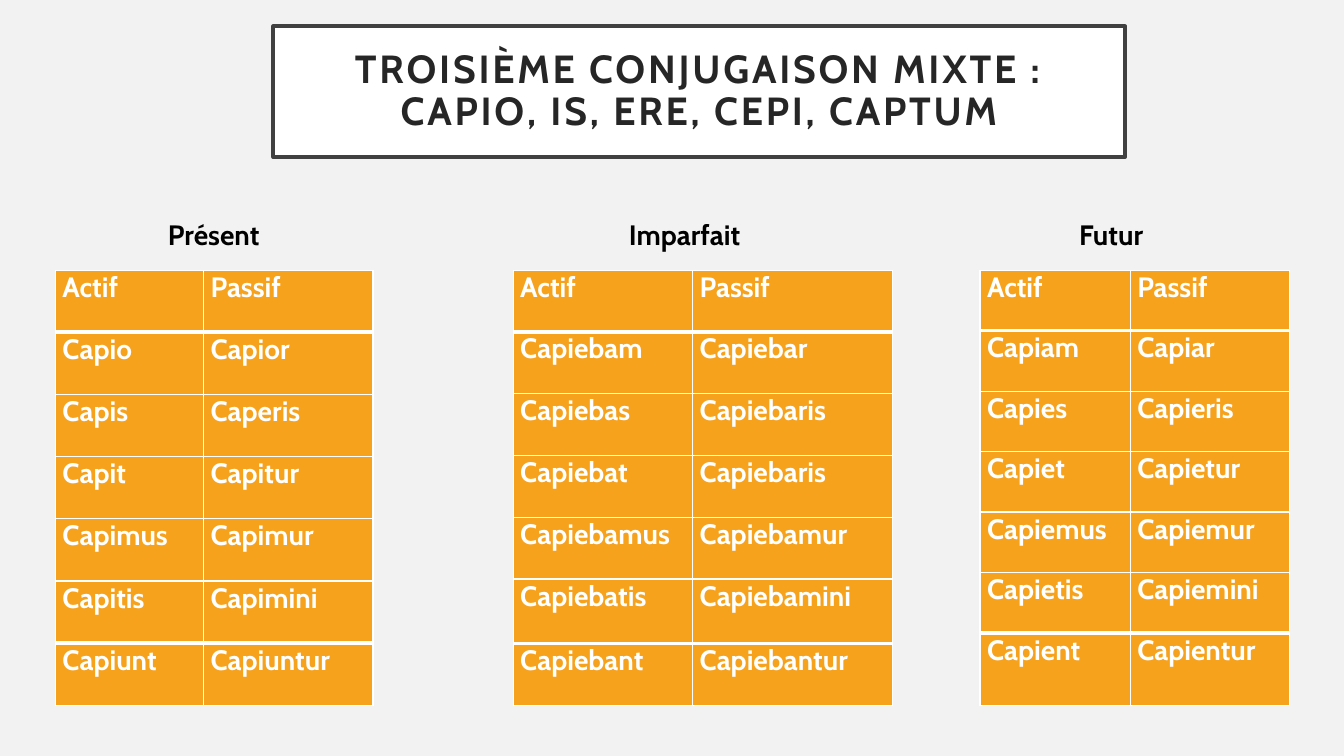
from lxml import etree
from pptx import Presentation
from pptx.dml.color import RGBColor
from pptx.enum.text import MSO_ANCHOR, MSO_AUTO_SIZE, PP_ALIGN
from pptx.oxml.ns import qn
from pptx.util import Inches, Pt

CENTER = PP_ALIGN.CENTER
LEFT = PP_ALIGN.LEFT
MIDDLE = MSO_ANCHOR.MIDDLE
TOP = MSO_ANCHOR.TOP
NO_FIT = MSO_AUTO_SIZE.NONE
GROW = MSO_AUTO_SIZE.SHAPE_TO_FIT_TEXT

COLORS = {
    "page": "F2F2F2",
    "white": "FFFFFF",
    "frame": "404040",
    "title": "262626",
    "tense": "000000",
    "cell": "F6A21D",
}
FONT = "Cabin"
TITLE = "TROISIÈME CONJUGAISON MIXTE : CAPIO, IS, ERE, CEPI, CAPTUM"
TITLE_BOX = (2.71, 0.26, 8.45, 1.3)
VOICES = ("Actif", "Passif")
TABLE_TOP, TABLE_HEIGHT = 2.68, 4.32
LABEL_TOP, LABEL_WIDTH, LABEL_HEIGHT = 2.1, 1.84, 0.44
THIN, THICK = 1, 3

TENSES = [
    {
        "name": "Présent", "label_left": 1.2, "left": 0.55,
        "columns": (1.47, 1.68), "special_rows": {},
        "active": "Capio Capis Capit Capimus Capitis Capiunt",
        "passive": "Capior Caperis Capitur Capimur Capimini Capiuntur",
    },
    {
        "name": "Imparfait", "label_left": 5.87, "left": 5.09,
        "columns": (1.78, 1.98), "special_rows": {5: 0.64},
        "active": "Capiebam Capiebas Capiebat Capiebamus Capiebatis Capiebant",
        "passive": "Capiebar Capiebaris Capiebaris Capiebamur Capiebamini Capiebantur",
    },
    {
        "name": "Futur", "label_left": 10.1, "left": 9.72,
        "columns": (1.49, 1.58), "special_rows": {6: 0.72},
        "active": "Capiam Capies Capiet Capiemus Capietis Capient",
        "passive": "Capiar Capieris Capietur Capiemur Capiemini Capientur",
    },
]


def color(name):
    """Return the named colour."""
    return RGBColor.from_string(COLORS[name])


def write(frame, text, size, ink, align):
    """Put one bold paragraph into a text frame and return its run."""
    para = frame.paragraphs[0]
    para.alignment = align
    span = para.add_run()
    span.text = text
    formats = {"name": FONT, "size": Pt(size), "bold": True}
    for key, value in formats.items():
        setattr(span.font, key, value)
    span.font.color.rgb = color(ink)
    return span


def set_margins(target, side, vertical):
    """Set the inner margins of a text frame or a cell."""
    margins = {"left": side, "right": side, "top": vertical, "bottom": vertical}
    for edge, value in margins.items():
        setattr(target, f"margin_{edge}", Inches(value))


def add_title(page, box):
    """Place the framed title in its box."""
    title = page.shapes.title
    for key, value in zip(("left", "top", "width", "height"), box):
        setattr(title, key, Inches(value))
    title.fill.solid()
    title.fill.fore_color.rgb = color("white")
    title.line.color.rgb = color("frame")
    title.line.width = Pt(2.5)
    frame = title.text_frame
    frame.word_wrap = True
    frame.auto_size = NO_FIT
    frame.vertical_anchor = MIDDLE
    set_margins(frame, 0.2, 0.2)
    span = write(frame, TITLE, 28, "title", CENTER)
    span.font._element.set("spc", "200")
    frame.paragraphs[0].line_spacing = 0.9


def add_label(page, box, text):
    """Place the name of a tense in its box."""
    label = page.shapes.add_textbox(*map(Inches, box))
    frame = label.text_frame
    frame.word_wrap = True
    frame.auto_size = GROW
    frame.vertical_anchor = MIDDLE
    write(frame, text, 20, "tense", CENTER)


def add_borders(cell, widths):
    """Draw white borders given as widths in points by side."""
    properties = cell._tc.get_or_add_tcPr()
    for side in "LRTB":
        line = etree.SubElement(properties, qn(f"a:ln{side}"), w=str(Pt(widths[side])))
        fill = etree.SubElement(line, qn("a:solidFill"))
        etree.SubElement(fill, qn("a:srgbClr"), val=COLORS["white"])


def add_conjugation(page, box, tense):
    """Fill the box with the table of one tense."""
    rows = [VOICES, *zip(tense["active"].split(), tense["passive"].split())]
    table = page.shapes.add_table(len(rows), len(VOICES), *map(Inches, box)).table
    table.first_row = table.horz_banding = False
    for column, width in zip(table.columns, tense["columns"]):
        column.width = Inches(width)
    special = tense["special_rows"]
    common = (box[3] - sum(special.values())) / (len(rows) - len(special))
    thick_edges = (1, len(rows) - 1)
    for index, texts in enumerate(rows):
        table.rows[index].height = Inches(special.get(index, common))
        widths = {
            "L": THIN,
            "R": THIN,
            "T": THICK if index in thick_edges else THIN,
            "B": THICK if index + 1 in thick_edges else THIN,
        }
        for position, text in enumerate(texts):
            cell = table.cell(index, position)
            set_margins(cell, 0.07, 0)
            cell.vertical_anchor = TOP
            add_borders(cell, widths)
            cell.fill.solid()
            cell.fill.fore_color.rgb = color("cell")
            write(cell.text_frame, text, 20, "white", LEFT)


def main():
    """Build and save the deck."""
    deck = Presentation()
    deck.slide_width = Inches(13.33)
    deck.slide_height = Inches(7.5)
    page = deck.slides.add_slide(deck.slide_layouts[5])
    page.background.fill.solid()
    page.background.fill.fore_color.rgb = color("page")
    add_title(page, TITLE_BOX)
    for tense in TENSES:
        label_box = (tense["label_left"], LABEL_TOP, LABEL_WIDTH, LABEL_HEIGHT)
        table_box = (tense["left"], TABLE_TOP, sum(tense["columns"]), TABLE_HEIGHT)
        add_label(page, label_box, tense["name"])
        add_conjugation(page, table_box, tense)
    deck.save("out.pptx")


if __name__ == "__main__":
    main()
